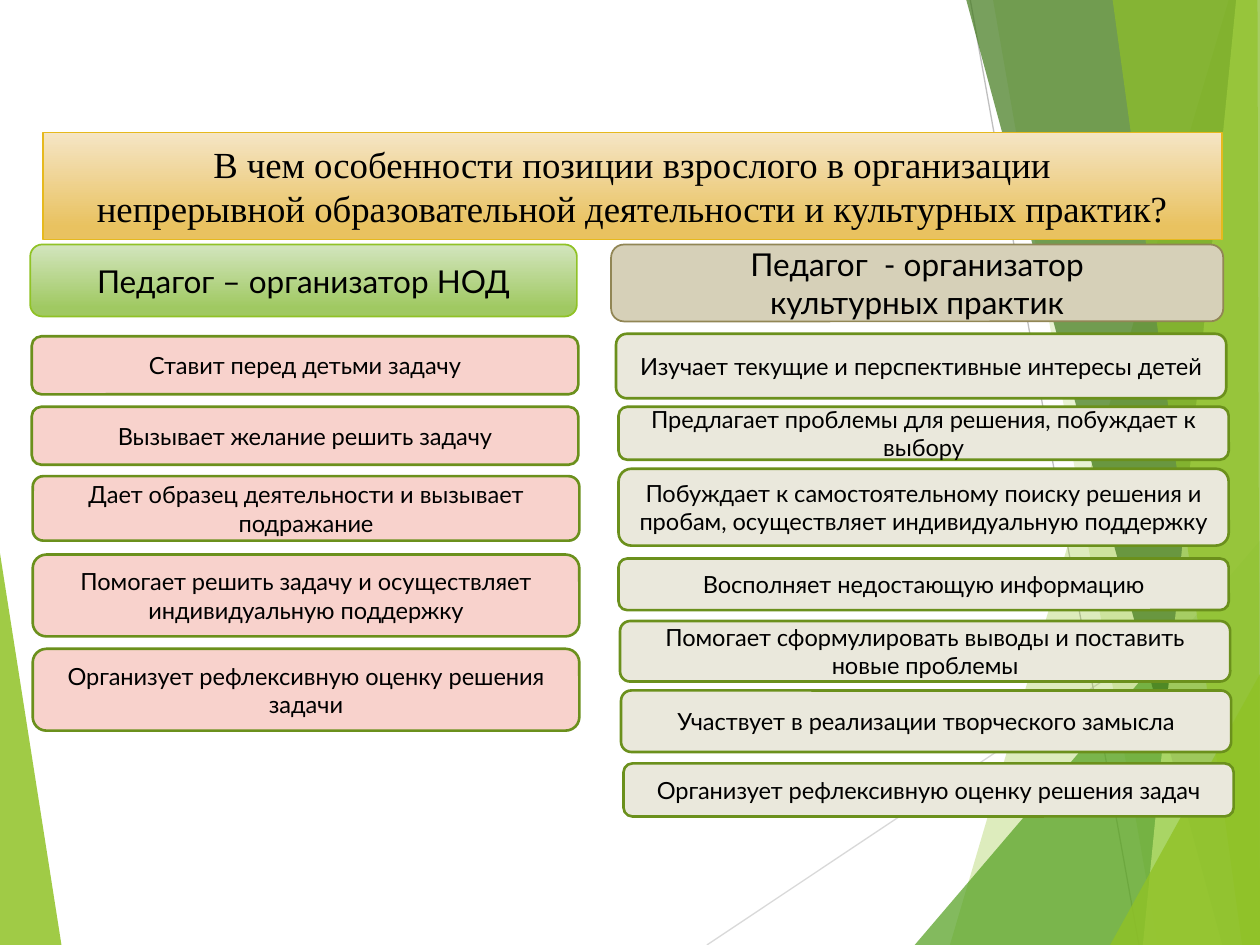
from lxml import etree
from pptx import Presentation, util as u
from pptx.dml.color import RGBColor
from pptx.enum import shapes, text
from pptx.oxml.ns import qn

THEME = {
    "ink": "000000", "edge": "6B901C",
    "pink": "F8D2CC", "sand": "EAE8DC",
    "head": 18, "body": 13.5, "title": 21,
    "sans": "Lato", "serif": "Times New Roman",
}
W, H = 25.4, 19.05

TITLE = ("В чем особенности позиции взрослого в организации\v"
         "непрерывной образовательной деятельности и культурных практик?")

COLS = [
    {"head": "Педагог – организатор НОД",
     "box": (0.61, 4.93, 11.02, 1.45),
     "fill": ("D3E5BE", "A0C962"), "edge": "90C226",
     "wide": 11.02, "tint": "pink",
     "rows": [
         (0.64, 6.78, 1.17, "Ставит перед детьми задачу"),
         (0.64, 8.2, 1.17, "Вызывает желание решить задачу"),
         (0.66, 9.6, 1.3, "Дает образец деятельности и вызывает подражание"),
         (0.66, 11.18, 1.65, "Помогает решить задачу и осуществляет индивидуальную поддержку"),
         (0.66, 13.08, 1.65, "Организует рефлексивную оценку решения задачи"),
     ]},
    {"head": "Педагог  - организатор\nкультурных практик",
     "box": (12.32, 4.93, 12.34, 1.55),
     "fill": ("D6D0B8",), "edge": "918655",
     "wide": 12.3, "tint": "sand",
     "rows": [
         (12.42, 6.73, 1.3, "Изучает текущие и перспективные интересы детей"),
         (12.47, 8.2, 1.07, "Предлагает проблемы для решения, побуждает к выбору"),
         (12.47, 9.45, 1.55, "Побуждает к самостоятельному поиску решения и пробам, "
                             "осуществляет индивидуальную поддержку"),
         (12.47, 11.26, 1.04, "Восполняет недостающую информацию"),
         (12.5, 12.52, 1.22, "Помогает сформулировать выводы и поставить новые проблемы"),
         (12.52, 13.92, 1.24, "Участвует в реализации творческого замысла"),
         (12.57, 15.39, 1.07, "Организует рефлексивную оценку решения задач"),
     ]},
]

LEAF = ("90C226", 85, [(0, 11.15), (1.24, H), (0, H)])
RAYS = [("D9D9D9", (14.25, H), (W, 11.61)),
        ("BFBFBF", (19.56, 0), (22.96, H))]
BANDS = [
    ("90C226", 30, [(24.77, 0), (19.15, H), (W, H), (W, 0)]),
    ("90C226", 20, [(20.02, 0), (23.34, H), (W, H), (W, 0)]),
    ("54A021", 72, [(18.44, H), (W, 10.9), (W, H)]),
    ("3F7819", 70, [(19.48, 0), (24.64, H), (W, H), (W, 0)]),
    ("C0E474", 70, [(24.92, 0), (23.04, H), (W, H), (W, 0)]),
    ("90C226", 65, [(22.43, 0), (25.04, H), (W, H), (25.35, 0)]),
    ("90C226", 80, [(22.38, H), (W, 13.59), (W, H)]),
]


def cm(vals):
    return [u.Cm(v) for v in vals]


def rgb(code):
    return RGBColor.from_string(code)


def paint(shape, fill, edge, width):
    if len(fill) == 1:
        shape.fill.solid()
        shape.fill.fore_color.rgb = rgb(fill[0])
    else:
        shape.fill.gradient()
        shape.fill.gradient_angle = 270
        for stop, code, pos in zip(shape.fill.gradient_stops, fill, (0, 0.88)):
            stop.color.rgb = rgb(code)
            stop.position = pos
    shape.line.color.rgb = rgb(edge)
    shape.line.width = u.Pt(width)


def write(shape, words, face, size):
    frame = shape.text_frame
    frame.text = words
    frame.word_wrap = True
    frame.auto_size = text.MSO_AUTO_SIZE.NONE
    frame.vertical_anchor = text.MSO_ANCHOR.MIDDLE
    for par in frame.paragraphs:
        par.alignment = text.PP_ALIGN.CENTER
        par.font.name = THEME[face]
        par.font.size = u.Pt(THEME[size])
        par.font.color.rgb = rgb(THEME["ink"])


def add_box(slide, box, words, size, fill, edge, width):
    shape = slide.shapes.add_shape(shapes.MSO_SHAPE.ROUNDED_RECTANGLE, *cm(box))
    shape.shadow.inherit = False
    paint(shape, fill, edge, width)
    write(shape, words, "sans", size)


def add_band(slide, code, alpha, pts):
    first, *rest = [cm(pt) for pt in pts]
    pen = slide.shapes.build_freeform(*first)
    pen.add_line_segments(rest, close=True)
    shape = pen.convert_to_shape()
    shape.shadow.inherit = False
    shape.fill.solid()
    shape.fill.fore_color.rgb = rgb(code)
    tone = shape.element.spPr.find(".//" + qn("a:srgbClr"))
    etree.SubElement(tone, qn("a:alpha"), val=str(alpha * 1000))
    shape.line.fill.background()


def add_ray(slide, code, start, end):
    ray = slide.shapes.add_connector(
        shapes.MSO_CONNECTOR.STRAIGHT, *cm(start + end))
    ray.line.color.rgb = rgb(code)
    ray.line.width = u.Pt(0.75)
    etree.SubElement(ray.element.spPr, qn("a:effectLst"))


def add_title(slide):
    title = slide.shapes.title
    title.left, title.top, title.width, title.height = cm((0.86, 2.67, 23.77, 2.16))
    paint(title, ("F5E5C5", "E9C260"), "E6B91E", 1)
    write(title, TITLE, "serif", "title")
    title.element.getparent().append(title.element)


def main():
    deck = Presentation()
    deck.slide_width, deck.slide_height = cm((W, H))
    slide = deck.slides.add_slide(deck.slide_layouts[5])
    add_band(slide, *LEAF)
    for ray in RAYS:
        add_ray(slide, *ray)
    for band in BANDS:
        add_band(slide, *band)
    add_title(slide)
    for col in COLS:
        add_box(slide, col["box"], col["head"], "head", col["fill"], col["edge"], 1)
        for left, top, high, words in col["rows"]:
            add_box(slide, (left, top, col["wide"], high), words, "body",
                    (THEME[col["tint"]],), THEME["edge"], 1.5)
    deck.save("out.pptx")


if __name__ == "__main__":
    main()
